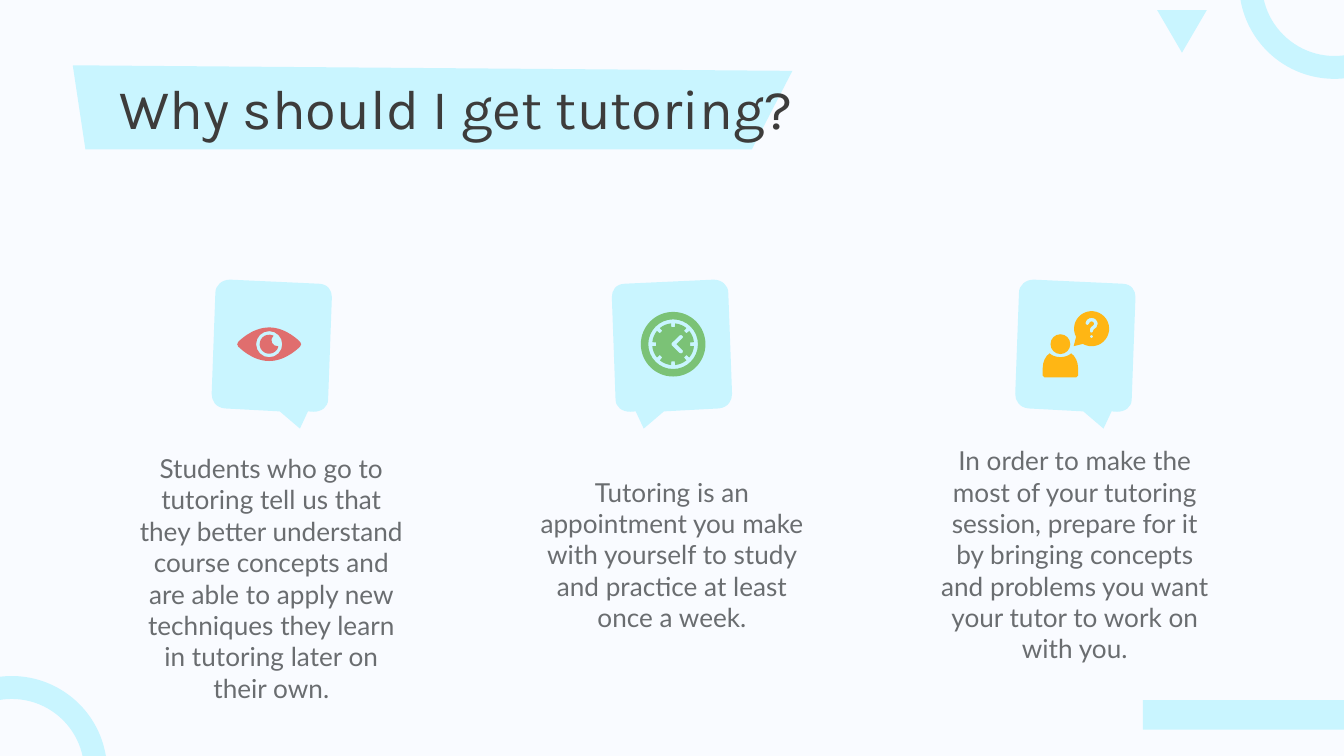
from math import ceil, cos, radians, sin, tan

from lxml import etree
from pptx import Presentation
from pptx import util as u
from pptx.dml.color import RGBColor
from pptx.enum import shapes, text
from pptx.oxml.ns import qn

Pt = u.Pt
KIND = shapes.MSO_SHAPE


def paint(fill, color):
    fill.solid()
    fill.fore_color.rgb = RGBColor.from_string(color)


def write(frame, words, font, size, color, align="LEFT", pad=7.2):
    frame.word_wrap = True
    frame.auto_size = text.MSO_AUTO_SIZE.NONE
    frame.vertical_anchor = text.MSO_ANCHOR.MIDDLE
    frame.margin_left = frame.margin_right = Pt(pad)
    frame.margin_top = frame.margin_bottom = Pt(7.2)
    para = frame.paragraphs[0]
    para.alignment = getattr(text.PP_ALIGN, align)
    para.space_before = Pt(0)
    run = para.add_run()
    run.text = words
    run.font.name, run.font.size, run.font.bold = font, Pt(size), False
    run.font.color.rgb = RGBColor.from_string(color)
    props = para._p.get_or_add_pPr()
    props.set("marL", "0")
    props.set("indent", "0")
    etree.SubElement(props, qn("a:buNone"))


def polar(r, deg):
    return r * cos(radians(deg)), r * sin(radians(deg))


def arc(x, y, r, start=0, end=360):
    """Give the first point of an arc, then one cubic curve per quarter turn."""
    count = ceil(abs(end - start) / 90)
    step = (end - start) / count
    pull = 4 / 3 * tan(radians(step / 4))
    px, py = polar(r, start)
    parts = [(x + px, y + py)]
    for i in range(1, count + 1):
        qx, qy = polar(r, start + step * i)
        parts.append((x + px - pull * py, y + py + pull * px,
                      x + qx + pull * qy, y + qy - pull * qx, x + qx, y + qy))
        px, py = qx, qy
    return parts


def bend(shape, rings):
    """Join each three line steps that stand for a cubic curve."""
    lines = iter(list(shape._element.iter(qn("a:lnTo"))))
    for ring in rings:
        for part in ring[1:]:
            line = next(lines)
            if len(part) == 6:
                line.tag  # first of the three steps
                curve = etree.Element(qn("a:cubicBezTo"))
                line.addprevious(curve)
                for step in (line, next(lines), next(lines)):
                    curve.append(step[0])
                    step.getparent().remove(step)


class Deck:
    sky, red, green, gold = "C9F5FF", "E06E6E", "7BC276", "FFB614"
    paper, ink, gray = "F9FBFF", "3D3C3B", "6A6D70"

    def __init__(self):
        self.prs = Presentation()
        self.prs.slide_width, self.prs.slide_height = Pt(720), Pt(405)
        self.slide = self.prs.slides.add_slide(self.prs.slide_layouts[4])
        paint(self.slide.background.fill, self.paper)

    def style(self, shape, color):
        shape.shadow.inherit = False
        paint(shape.fill, color)
        shape.line.fill.background()

    def shape(self, kind, x, y, w, h, color, turn=0, adjust=()):
        item = self.slide.shapes.add_shape(kind, Pt(x), Pt(y), Pt(w), Pt(h))
        for i, value in enumerate(adjust):
            item.adjustments[i] = value
        item.rotation = turn
        self.style(item, color)

    def outline(self, x, y, color, *rings, flip=1):
        """Draw closed rings of points and curves around (x, y); inner ones are holes."""
        pen = None
        for ring in rings:
            spots = [(Pt(x + flip * part[i]), Pt(y + part[i + 1]))
                     for part in ring for i in range(0, len(part), 2)]
            if pen:
                pen.move_to(*spots[0])
            else:
                pen = self.slide.shapes.build_freeform(*spots[0])
            pen.add_line_segments(spots[1:], close=True)
        item = pen.convert_to_shape()
        bend(item, rings)
        self.style(item, color)

    def holder(self, idx, x, y, w, h, words, **form):
        item = self.slide.placeholders[idx]
        item.left, item.top, item.width, item.height = Pt(x), Pt(y), Pt(w), Pt(h)
        write(item.text_frame, words, **form)
        self.slide.shapes._spTree.append(item._element)  # bring to front

    def trim(self):
        for item in list(self.slide.placeholders):
            if not item.text_frame.text:
                item._element.getparent().remove(item._element)

    def bubble(self, x, y, flip):
        ring = [(25.2, -32.4), (-22.3, -34.6), (-26.6, -34.6, -30.2, -31.7, -30.2, -27.4),
                (-32.2, 26.6), (-32.2, 30.2, -30.2, 33.8, -25.2, 34.4),
                (4.3, 36), (15.1, 45.2), (19.4, 36), (22.3, 36.2),
                (26.6, 36.2, 30.2, 33.8, 30.2, 29.5),
                (32.2, -25.2), (32.2, -28.8, 30.2, -32.2, 25.2, -32.4)]
        self.outline(x, y, self.sky, ring, flip=flip)

    def eye(self, x, y):
        lid = [(0, -9), (9.4, -9, 16.6, -1.2, 16.6, -1.2), (17.3, -0.4, 17.3, 0.4, 16.6, 1.2),
               (16.6, 1.2, 9.4, 9, 0, 9), (-9.4, 9, -16.6, 1.2, -16.6, 1.2),
               (-17.3, 0.4, -17.3, -0.4, -16.6, -1.2), (-16.6, -1.2, -9.4, -9, 0, -9)]
        self.outline(x, y, self.red, lid, arc(0, 0, 7))
        self.outline(x, y, self.red, arc(0, 0, 5.1, 15, 295) + arc(4.4, -2.1, 3.2, 230, 85))

    def clock(self, x, y):
        self.outline(x, y, self.green, arc(0, 0, 17.3), arc(0, 0, 13.3))
        face = []
        for deg in range(0, 360, 45):
            face += [polar(9.2, deg - 6), polar(9.2, deg + 6)]
            face += arc(0, 0, 11.2, deg + 5.5, deg + 39.5)
        hand = [(4.3, -5), (5.2, -4.4), (5.2, -3.4), (1.8, 0), (5.2, 3.4),
                (5.2, 4.4), (4.3, 5), (3.4, 4.7), (-0.8, 0.6), (-0.8, -0.6), (3.4, -4.7)]
        self.outline(x, y, self.green, face, hand)

    def asker(self, x, y):
        self.outline(x - 7.9, y, self.gold, arc(0, 0, 5.3))
        body = [(-13.7, 4.9), (-15.8, 6.3, -17.4, 9.4, -17.4, 13), (-17.4, 16.8),
                (-17.4, 17.4, -17, 17.8, -16.4, 17.8), (0.6, 17.8),
                (1.2, 17.8, 1.6, 17.4, 1.6, 16.8), (1.6, 13),
                (1.6, 9.4, 0, 6.3, -2.1, 4.9), (-5, 7.6, -10.8, 7.6, -13.7, 4.9)]
        self.outline(x, y, self.gold, body)
        hook = [(0, -5.8), (2, -5.8, 3.3, -4.2, 3.3, -2.6),
                (3.3, -1, 2.2, -0.2, 1, 0.6), (1, 2.6, -1, 2.6, -1, 1),
                (-1, -1.4, 1.3, -1.4, 1.3, -2.6), (1.3, -4.3, -1.2, -4.3, -1.3, -2.7),
                (-1.3, -1.5, -3.3, -1.5, -3.3, -2.7), (-3.3, -4.4, -1.8, -5.8, 0, -5.8)]
        self.outline(x + 8.8, y - 8.3, self.gold, arc(0, 0, 9.4, 152, 480) + [(-9.6, 9.4)],
                     hook, arc(0, 4.2, 1))


def main():
    deck = Deck()
    for x, y, turn in ((-44.8, 362.2, 45), (663.8, -60, 210)):
        deck.shape(KIND.BLOCK_ARC, x, y, 102.2, 102.2, deck.sky, turn, (108, 2.64, 0.12))
    deck.shape(KIND.RECTANGLE, 612.3, 375.1, 110.9, 15.8, deck.sky)
    deck.shape(KIND.ISOSCELES_TRIANGLE, 619.9, 5.4, 26.6, 22.8, deck.sky, 180)
    deck.outline(0, 0, deck.sky, [(39, 35), (424.5, 38), (402.8, 80), (45.8, 80)])
    deck.holder(0, 56.9, 34.9, 607, 45.4, "Why should I get tutoring?",
                font="Karla", size=30, color=deck.ink)

    mid = 184.4
    for x, flip in ((145.6, 1), (360, -1), (576.1, 1)):
        deck.bubble(x, mid, flip)
    deck.eye(144.2, mid)
    deck.clock(360.6, mid)
    deck.asker(576, mid)

    notes = (
        (66.2, 279, 7.2, "Students who go to tutoring tell us that they better understand "
         "course concepts and are able to apply new techniques they learn in tutoring "
         "later on their own."),
        (280.8, 266.4, 4.3, "Tutoring is an appointment you make with yourself to study "
         "and practice at least once a week."),
        (496.6, 266.4, 4.3, "In order to make the most of your tutoring session, prepare "
         "for it by bringing concepts and problems you want your tutor to work on with you."),
    )
    for idx, (x, y, pad, words) in enumerate(notes, 1):
        deck.holder(idx, x, y, 158.4, 61.2, words, font="Lato", size=14,
                    color=deck.gray, align="CENTER", pad=pad)
    deck.trim()
    deck.prs.save("out.pptx")


if __name__ == "__main__":
    main()
